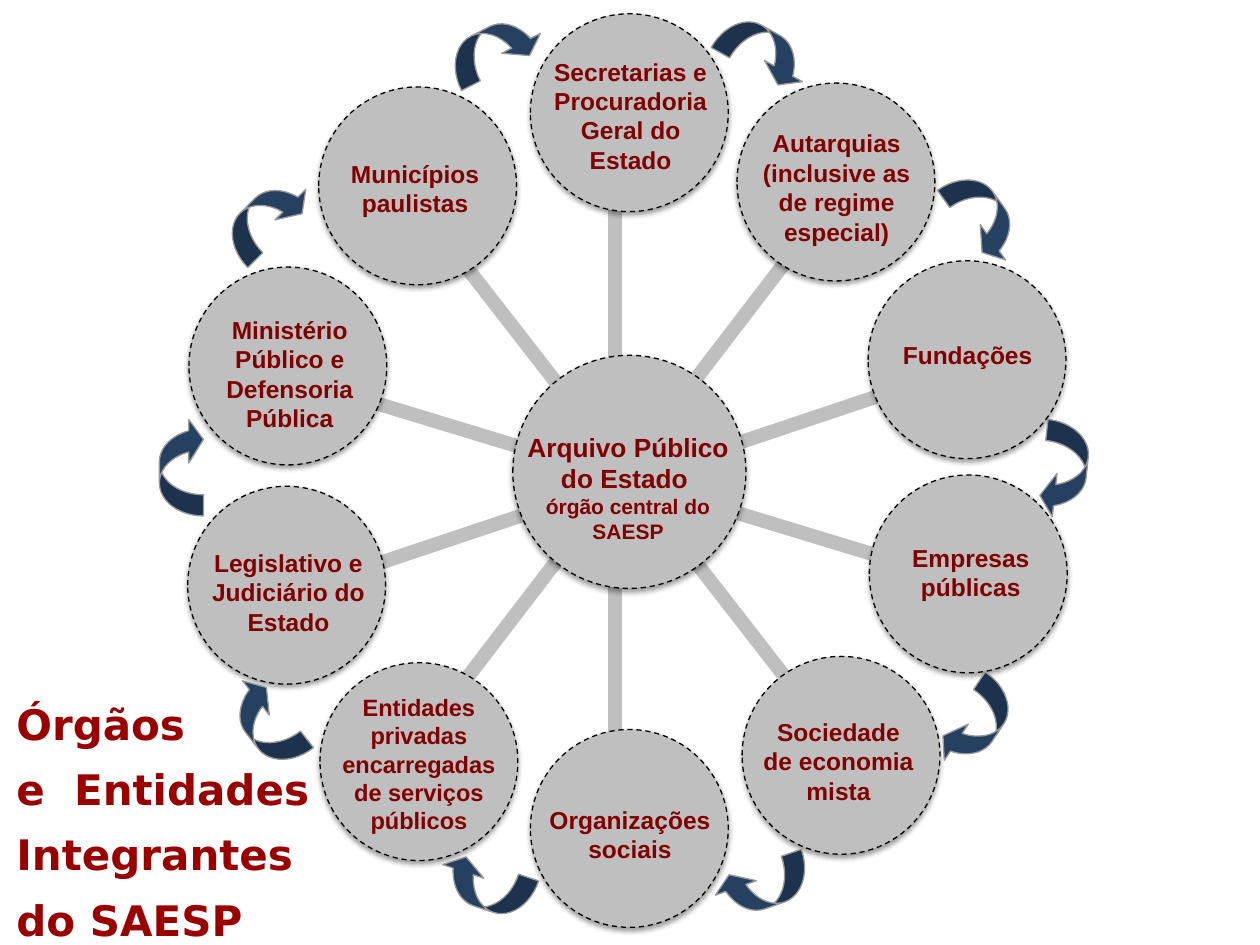
from lxml.etree import SubElement
from pptx import Presentation
from pptx.dml.color import RGBColor
from pptx.enum.dml import MSO_LINE
from pptx.enum.shapes import MSO_CONNECTOR, MSO_SHAPE
from pptx.enum.text import MSO_ANCHOR, PP_ALIGN
from pptx.oxml.ns import qn
from pptx.util import Inches, Pt

COLORS = {
    "disc": "BFBFBF", "outline": "000000", "label": "800000",
    "title": "990000", "arrow": "254061", "arrow_line": "999999",
}
DISC = 1.57
HUB = 1.85
ARROW_W, ARROW_H = 0.78, 0.35

SPOKES = [
    (4.88, 1.62, 4.88, 5.88),
    (2.8, 4.54, 7.28, 3.04),
    (2.72, 3.12, 7.13, 4.46),
    (6.34, 1.94, 3.5, 5.65),
    (3.5, 1.86, 6.5, 5.72),
]
MEMBERS = [
    ((4.21, 0.11), (0, 0.29, 1.59, 1.09), ["Secretarias e Procuradoria Geral do Estado"], 14),
    ((5.85, 0.66), (0.04, 0.31, 1.5, 1.26), ["Autarquias (inclusive as de regime especial)"], 14),
    ((6.89, 2.07), (0.08, 0.58, 1.42, 0.5), ["Fundações"], 14),
    ((6.9, 3.77), (0.13, 0.49, 1.35, 0.74), ["Empresas", "públicas"], 14),
    ((5.89, 5.21), (0.05, 0.43, 1.43, 0.84), ["Sociedade de economia mista"], 14),
    ((4.21, 5.79), (0, 0.55, 1.58, 0.62), ["Organizações sociais"], 14),
    ((2.54, 5.26), (-0.03, 0.19, 1.63, 1.19),
     ["Entidades privadas encarregadas de serviços públicos"], 13.5),
    ((1.49, 3.86), (0.05, 0.44, 1.5, 0.94), ["Legislativo e Judiciário do Estado"], 14),
    ((1.5, 2.12), (0.08, 0.33, 1.44, 1.03), ["Ministério Público e Defensoria Pública"], 14),
    ((2.53, 0.69), (0.13, 0.52, 1.27, 0.62), ["Municípios paulistas"], 14),
]
ARROWS = [
    (5.68, 0.24, 29.2), (7.42, 1.55, 54.3), (8.06, 3.56, 96.1),
    (7.36, 5.58, 123.5), (5.66, 6.86, 160.6), (3.46, 6.86, 198.3),
    (1.72, 5.56, 232), (1.05, 3.53, 270), (1.73, 1.55, 315.2),
    (3.54, 0.21, 332.8),
]


def rgb(name):
    return RGBColor.from_string(COLORS[name])


def add_text(p, text, size, color, font="Arial", align=PP_ALIGN.CENTER, spacing=None):
    p.alignment = align
    p.line_spacing = spacing
    r = p.add_run()
    r.text = text
    r.font.name = font
    r.font.size = Pt(size)
    r.font.bold = True
    r.font.color.rgb = rgb(color)


def add_paragraphs(tf, lines, **fmt):
    for i, (text, size) in enumerate(lines):
        p = tf.paragraphs[0] if i == 0 else tf.add_paragraph()
        add_text(p, text, size, **fmt)


def add_shadow(sp):
    sp.shadow.inherit = False
    effects = sp._element.spPr.find(qn("a:effectLst"))
    shadow = SubElement(effects, qn("a:outerShdw"), blurRad=str(Pt(3.1)),
                        dist=str(Pt(1.6)), dir="5400000", rotWithShape="0")
    color = SubElement(shadow, qn("a:srgbClr"), val=COLORS["outline"])
    SubElement(color, qn("a:alpha"), val="38000")


def add_spoke(s, x1, y1, x2, y2):
    c = s.shapes.add_connector(MSO_CONNECTOR.STRAIGHT, *map(Inches, (x1, y1, x2, y2)))
    c.line.color.rgb = rgb("disc")
    c.line.width = Pt(8)
    SubElement(c._element.spPr, qn("a:effectLst"))


def add_disc(s, x, y, size, label_box, lines):
    sp = s.shapes.add_shape(MSO_SHAPE.OVAL, *map(Inches, (x, y, size, size)))
    sp.fill.solid()
    sp.fill.fore_color.rgb = rgb("disc")
    sp.line.color.rgb = rgb("outline")
    sp.line.width = Pt(0.75)
    sp.line.dash_style = MSO_LINE.DASH
    add_shadow(sp)
    dx, dy, w, h = label_box
    tf = s.shapes.add_textbox(*map(Inches, (x + dx, y + dy, w, h))).text_frame
    tf.word_wrap = True
    add_paragraphs(tf, lines, color="label")


def add_arrow(s, x, y, angle):
    sp = s.shapes.add_shape(MSO_SHAPE.CURVED_DOWN_ARROW,
                            *map(Inches, (x, y, ARROW_W, ARROW_H)))
    for i, value in enumerate((0.48, 0.987, 0.333)):
        sp.adjustments[i] = value
    sp.rotation = angle
    sp.shadow.inherit = False
    sp.fill.solid()
    sp.fill.fore_color.rgb = rgb("arrow")
    sp.line.color.rgb = rgb("arrow_line")
    sp.line.width = Pt(0.75)


def add_title(s, x, y, w, h):
    sp = s.shapes.title
    sp.left, sp.top, sp.width, sp.height = map(Inches, (x, y, w, h))
    tf = sp.text_frame
    tf.word_wrap = True
    tf.vertical_anchor = MSO_ANCHOR.TOP
    lines = ["Órgãos", "e  Entidades", "Integrantes do SAESP"]
    add_paragraphs(tf, [(t, 24) for t in lines], color="title",
                   font="DejaVu Sans", align=PP_ALIGN.LEFT, spacing=1.3)


def main():
    prs = Presentation()
    prs.slide_width, prs.slide_height = Inches(10), Inches(7.5)
    s = prs.slides.add_slide(prs.slide_layouts[5])
    for spoke in SPOKES:
        add_spoke(s, *spoke)
    for (x, y), label_box, texts, size in MEMBERS:
        add_disc(s, x, y, DISC, label_box, [(t, size) for t in texts])
    add_disc(s, 4.07, 2.82, HUB, (0, 0.55, 1.83, 1.17),
             [("Arquivo Público do Estado ", 15), ("órgão central do SAESP", 12)])
    for arrow in ARROWS:
        add_arrow(s, *arrow)
    add_title(s, 0.03, 5.37, 2.56, 2.2)
    prs.save("out.pptx")


if __name__ == "__main__":
    main()
